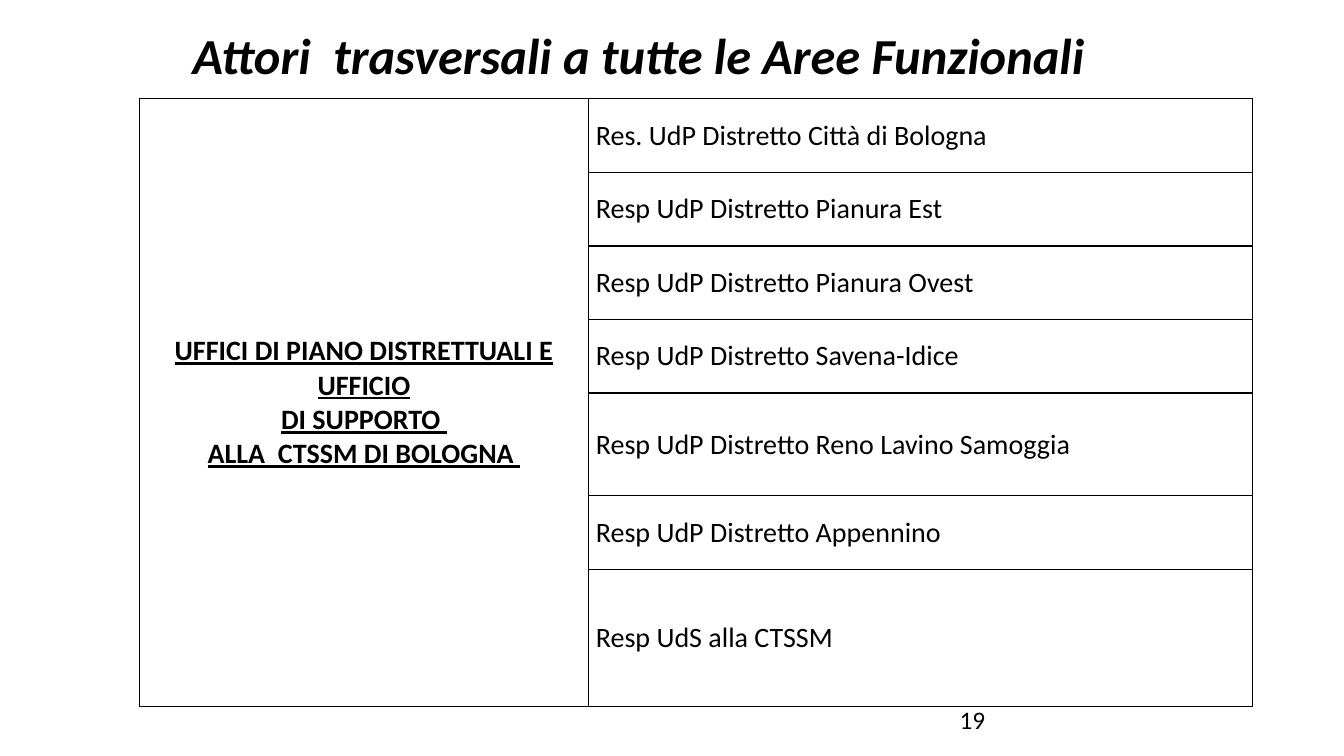
import pptx
import pptx.util
import pptx.oxml.ns
import lxml.etree
from pptx.dml.color import RGBColor
from pptx.enum.text import MSO_ANCHOR, PP_ALIGN
from pptx.util import Inches

# Content
TITLE = "Attori  trasversali a tutte le Aree Funzionali"
OFFICES = [
    "UFFICI DI PIANO DISTRETTUALI E UFFICIO",
    "DI SUPPORTO ",
    "ALLA  CTSSM DI BOLOGNA ",
]
ROW_HEIGHT = 0.73
MANAGERS = [  # text, row height
    ("Res. UdP Distretto Città di Bologna", ROW_HEIGHT),
    ("Resp UdP Distretto Pianura Est", ROW_HEIGHT),
    ("Resp UdP Distretto Pianura Ovest", ROW_HEIGHT),
    ("Resp UdP Distretto Savena-Idice", ROW_HEIGHT),
    ("Resp UdP Distretto Reno Lavino Samoggia", 1.02),
    ("Resp UdP Distretto Appennino", ROW_HEIGHT),
    ("Resp UdS alla CTSSM", 1.36),
]
PAGE = "19"
COLUMNS = [4.46, 6.58]
COLORS = {"text": "000000", "border": "000000"}
FONT = "Calibri"


def write(tf, lines, size, align=PP_ALIGN.LEFT, bold=False, italic=False, underline=False):
    tf.text = "\n".join(lines)
    for p in tf.paragraphs:
        p.alignment = align
        font = p.font
        font.name, font.size = FONT, pptx.util.Pt(size)
        font.bold, font.italic, font.underline = bold, italic, underline
        font.color.rgb = RGBColor.from_string(COLORS["text"])


def add_borders(cell):
    qn = pptx.oxml.ns.qn
    tc_pr = cell._tc.get_or_add_tcPr()
    for i, side in enumerate(("a:lnL", "a:lnR", "a:lnT", "a:lnB")):
        ln = lxml.etree.Element(qn(side), w=str(pptx.util.Pt(1)))
        fill = lxml.etree.SubElement(ln, qn("a:solidFill"))
        lxml.etree.SubElement(fill, qn("a:srgbClr"), val=COLORS["border"])
        tc_pr.insert(i, ln)


prs = pptx.Presentation()
prs.slide_width, prs.slide_height = Inches(13.33), Inches(7.5)
s = prs.slides.add_slide(prs.slide_layouts[5])

# Title
title = s.shapes.title
title.left, title.top = Inches(1.81), Inches(0.18)
title.width, title.height = Inches(9.5), Inches(0.71)
write(title.text_frame, [TITLE], 36, bold=True, italic=True)
title.text_frame.vertical_anchor = MSO_ANCHOR.MIDDLE

# Table of offices and managers
heights = [height for _, height in MANAGERS]
table = s.shapes.add_table(
    len(MANAGERS), len(COLUMNS), Inches(1.38), Inches(0.98),
    Inches(sum(COLUMNS)), Inches(sum(heights))).table
table.first_row = table.horz_banding = False
for column, width in zip(table.columns, COLUMNS):
    column.width = Inches(width)
for row, height in zip(table.rows, heights):
    row.height = Inches(height)
for cell in table.iter_cells():
    cell.fill.background()
    cell.vertical_anchor = MSO_ANCHOR.MIDDLE
    cell.margin_left = cell.margin_right = Inches(0.07)
    cell.margin_top = cell.margin_bottom = 0
    add_borders(cell)

offices = table.cell(0, 0)
offices.merge(table.cell(len(MANAGERS) - 1, 0))
write(offices.text_frame, OFFICES, 20, PP_ALIGN.CENTER, bold=True, underline=True)
for i, (manager, _) in enumerate(MANAGERS):
    write(table.cell(i, 1).text_frame, [manager], 20)

# Page number
page = s.shapes.add_textbox(Inches(9.42), Inches(6.94), Inches(3), Inches(0.4))
page.text_frame.word_wrap = True
write(page.text_frame, [PAGE], 18)

prs.save("out.pptx")
